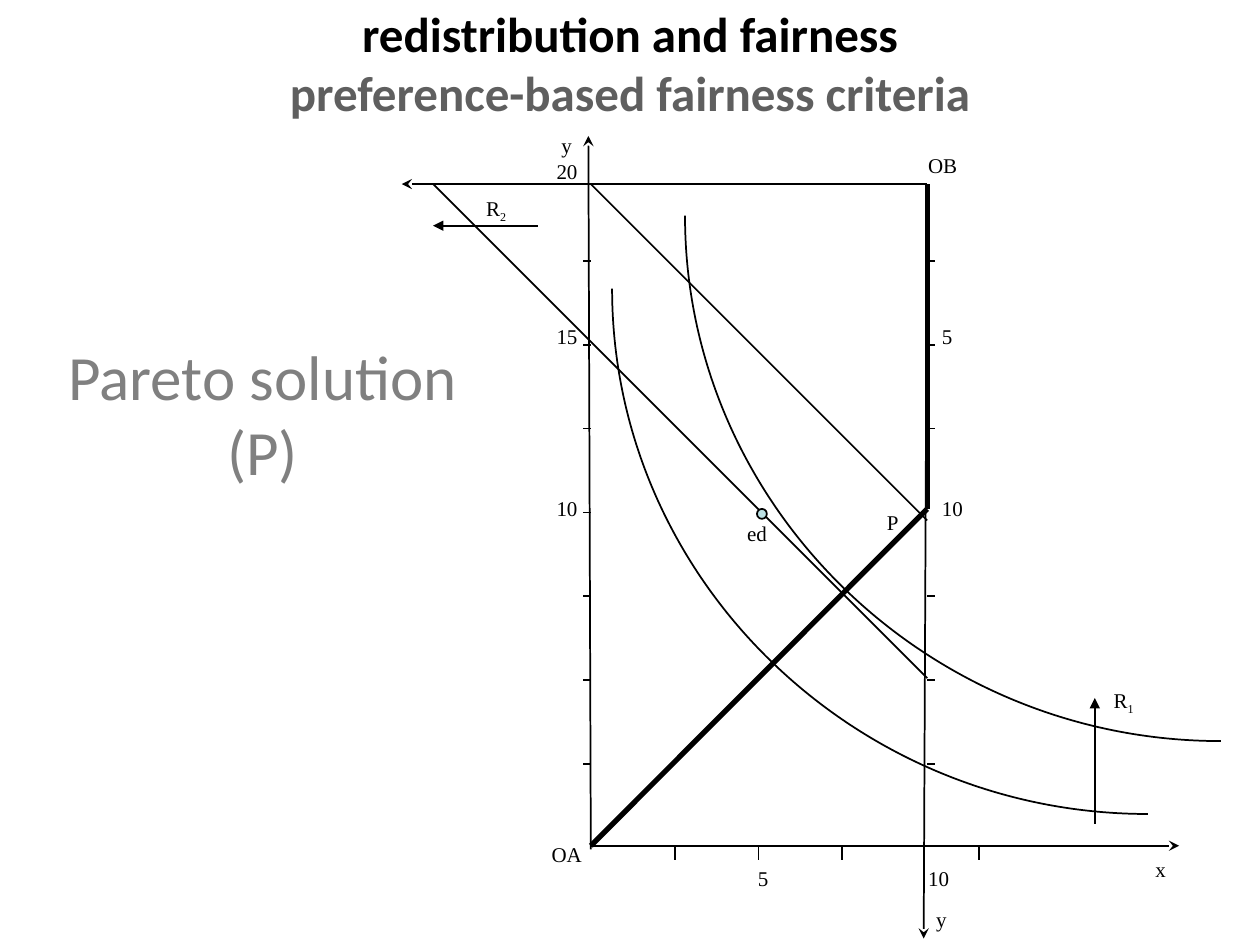
import pptx
import pptx.dml.color
import pptx.enum.shapes
import pptx.enum.text
import pptx.oxml
import pptx.oxml.ns
import pptx.util

Cm = pptx.util.Cm
Pt = pptx.util.Pt
qn = pptx.oxml.ns.qn

INK = "000000"
WIDTH, HEIGHT = 6.78, 13.34  # Edgeworth box, cm
TICK_STEP = 1.69
TICK_YS = [1.55 + TICK_STEP * i for i in range(7)]
TICK_XS = [TICK_STEP * i for i in (1, 2, 3)] + [7.83]

# (start, end, arrowhead), cm from the top left corner of the box
AXES = [
    ((0, HEIGHT), (11.86, HEIGHT), "stealth"),
    ((0, 13.41), (-0.05, -0.97), "stealth"),
    ((WIDTH, 0), (6.71, 15.21), "stealth"),
    ((WIDTH, 0), (-3.81, 0), "stealth"),
]
BUDGET_LINES = [((WIDTH, WIDTH), (0, 0)), ((WIDTH, 9.96), (-3.18, 0))]
SHIFT_ARROWS = [((-1.07, 0.84), (-3.18, 0.84)), ((10.16, 12.9), (10.16, 10.36))]
PARETO_SET = [(0, HEIGHT), (WIDTH, 6.55), (WIDTH, 0)]
CURVE_STARTS = [(1.9, 0.64), (0.43, 2.11)]

# (text, subscript, left, top, width)
LABELS = [
    ("20", "", -0.94, -0.64, 0.94), ("15", "", -0.94, 2.69, 0.94),
    ("10", "", -0.94, 6.15, 0.94), ("5", "", 6.83, 2.69, 0.71),
    ("10", "", 6.83, 6.15, 0.94), ("5", "", 3.12, 13.61, 0.71),
    ("10", "", 6.55, 13.61, 0.94), ("y", "", -0.84, -1.17, 0.71),
    ("x", "", 11.13, 13.44, 0.71), ("y", "", 6.71, 14.45, 0.71),
    ("P", "", 5.72, 6.43, 0.74), ("ed", "", 2.9, 6.65, 0.91),
    ("OA", "", -1.04, 13.13, 1.12), ("OB", "", 6.55, -0.76, 1.09),
    ("R", "2", -2.36, 0.1, 0.94), ("R", "1", 10.29, 10.03, 0.94),
]


def color(hex_text):
    return pptx.dml.color.RGBColor.from_string(hex_text)


def add_run(paragraph, text, size, font, ink=INK, bold=False):
    run = paragraph.add_run()
    run.text = text
    run.font.size = Pt(size)
    run.font.name = font
    run.font.bold = bold
    run.font.color.rgb = color(ink)
    return run


def add_segment(slide, start, end, weight=1, arrow=None):
    segment = slide.shapes.add_connector(
        pptx.enum.shapes.MSO_CONNECTOR.STRAIGHT, *map(Cm, (*start, *end)))
    segment.line.color.rgb = color(INK)
    segment.line.width = Pt(weight)
    if arrow:
        head = pptx.oxml.parse_xml(
            f'<a:tailEnd {pptx.oxml.ns.nsdecls("a")} type="{arrow}"/>')
        segment.line._get_or_add_ln().append(head)
    segment._element.spPr.append(
        pptx.oxml.parse_xml(f'<a:effectLst {pptx.oxml.ns.nsdecls("a")}/>'))


def add_indifference_curve(slide, left, top, width=10.8, height=10.59):
    """Draw one cubic Bezier falling from the top left to the bottom right."""
    controls = [(left, top + height * 0.55), (left + width * 0.45, top + height),
                (left + width, top + height)]
    builder = slide.shapes.build_freeform(Cm(left), Cm(top))
    builder.add_line_segments([(Cm(x), Cm(y)) for x, y in controls], close=False)
    curve = builder.convert_to_shape()
    curve.shadow.inherit = False
    curve.fill.background()
    curve.line.color.rgb = color(INK)
    curve.line.width = Pt(1)
    # The builder only makes straight lines: merge its three into one curve.
    steps = list(curve._element.iter(qn("a:lnTo")))
    bezier = pptx.oxml.parse_xml(f'<a:cubicBezTo {pptx.oxml.ns.nsdecls("a")}/>')
    steps[0].addprevious(bezier)
    for step in steps:
        bezier.append(step[0])
        step.getparent().remove(step)


def add_label(slide, text, subscript, left, top, width):
    frame = slide.shapes.add_textbox(Cm(left), Cm(top), Cm(width), Cm(0.76)).text_frame
    frame.word_wrap = False
    paragraph = frame.paragraphs[0]
    add_run(paragraph, text, 12, "Times New Roman")
    if subscript:
        lowered = add_run(paragraph, subscript, 12, "Times New Roman")
        lowered.font._element.set("baseline", "-25000")


def add_heading(slide, left, top, width, height, lines, size, bold=False):
    """Write (text, colour) lines centred in the box, as one paragraph."""
    frame = slide.shapes.add_textbox(Cm(left), Cm(top), Cm(width), Cm(height)).text_frame
    frame.word_wrap = True
    frame.vertical_anchor = pptx.enum.text.MSO_ANCHOR.MIDDLE
    paragraph = frame.paragraphs[0]
    paragraph.alignment = pptx.enum.text.PP_ALIGN.CENTER
    for number, (text, ink) in enumerate(lines):
        if number:
            paragraph.add_line_break()
        add_run(paragraph, text, size, "Calibri", ink, bold)


def add_edgeworth_box(slide, left, top):
    def at(point):
        return left + point[0], top + point[1]

    for start, end, arrow in AXES:
        add_segment(slide, at(start), at(end), arrow=arrow)
    for number, y in enumerate(TICK_YS):
        add_segment(slide, at((-0.15, y)), at((0, y)))
        if number != 3:  # P marks the middle of the right side
            add_segment(slide, at((WIDTH, y)), at((WIDTH + 0.15, y)))
    for x in TICK_XS:
        add_segment(slide, at((x, HEIGHT)), at((x, HEIGHT + 0.28)))
    for start, end in BUDGET_LINES:
        add_segment(slide, at(start), at(end))
    for start, end in zip(PARETO_SET, PARETO_SET[1:]):
        add_segment(slide, at(start), at(end), weight=3)
    for start in CURVE_STARTS:
        add_indifference_curve(slide, *at(start))
    for start, end in SHIFT_ARROWS:
        add_segment(slide, at(start), at(end), arrow="triangle")

    endowment = slide.shapes.add_shape(
        pptx.enum.shapes.MSO_SHAPE.FLOWCHART_CONNECTOR,
        *map(Cm, at((3.35, 6.55))), Cm(0.2), Cm(0.2))
    endowment.shadow.inherit = False
    endowment.fill.solid()
    endowment.fill.fore_color.rgb = color("BBE0E3")
    endowment.line.color.rgb = color(INK)
    endowment.line.width = Pt(1)

    for text, subscript, x, y, width in LABELS:
        add_label(slide, text, subscript, *at((x, y)), width)


def main():
    deck = pptx.Presentation()
    deck.slide_width, deck.slide_height = Cm(25.4), Cm(19.05)
    slide = deck.slides.add_slide(deck.slide_layouts[6])
    add_heading(slide, 0.89, 4.32, 8.81, 8,
                [("Pareto solution", "808080"), ("(P)", "808080")], 36)
    add_edgeworth_box(slide, 11.91, 3.71)
    add_heading(slide, 1.27, -0.33, 22.86, 3.18,
                [("redistribution and fairness", INK),
                 ("preference-based fairness criteria", "5F5F5F")], 28, bold=True)
    deck.save("out.pptx")


if __name__ == "__main__":
    main()
